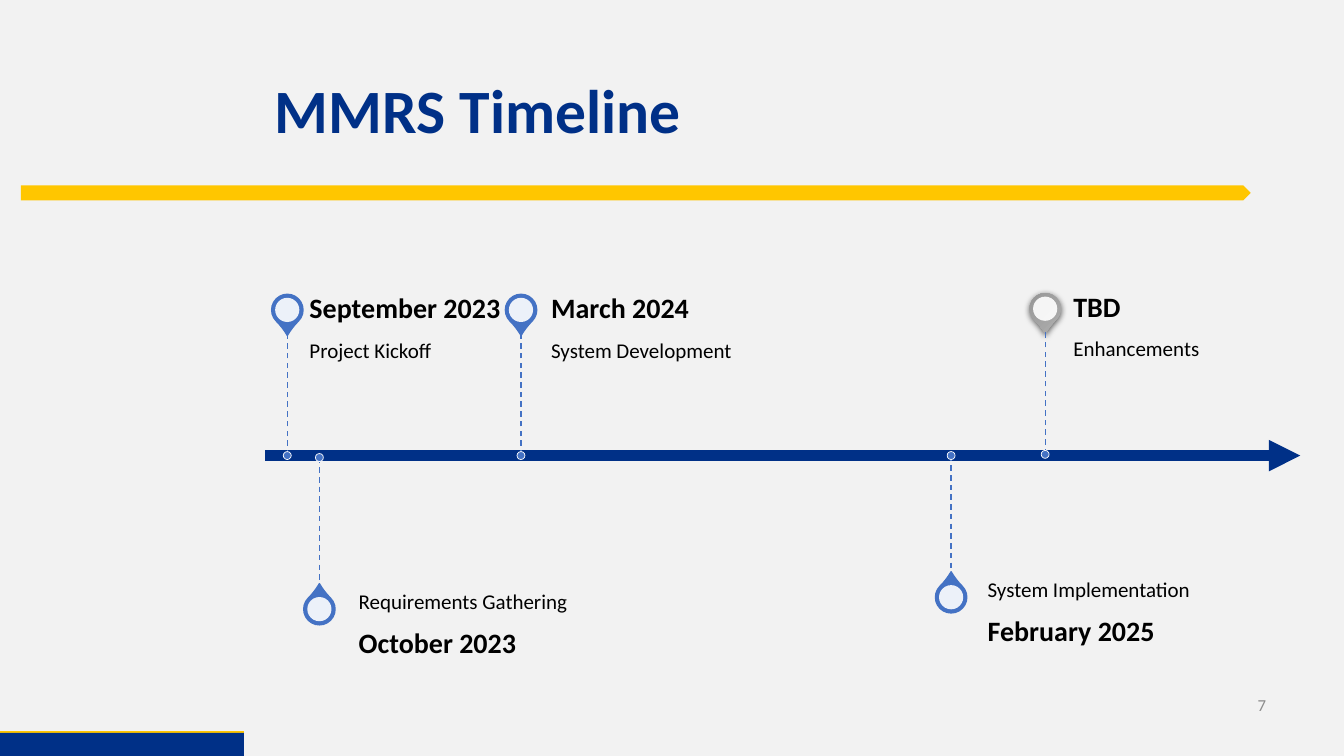
from dataclasses import dataclass

from lxml.etree import SubElement
from pptx import Presentation
from pptx.dml.color import RGBColor
from pptx.enum.dml import MSO_LINE
from pptx.enum.shapes import MSO_CONNECTOR, MSO_SHAPE
from pptx.enum.text import MSO_ANCHOR, PP_ALIGN
from pptx.oxml.ns import qn
from pptx.util import Cm, Pt

NAVY = RGBColor(0x00, 0x30, 0x87)
GOLD = RGBColor(0xFF, 0xC6, 0x00)
BLUE = RGBColor(0x44, 0x72, 0xC4)
WHITE = RGBColor(0xFF, 0xFF, 0xFF)
BLACK = RGBColor(0x00, 0x00, 0x00)
PALE_GRAY = RGBColor(0xF2, 0xF2, 0xF2)
NUMBER_GRAY = RGBColor(0x8C, 0x8C, 0x8C)
PIN_GRAYS = (RGBColor(0xAF, 0xAF, 0xAF), RGBColor(0x93, 0x93, 0x93))

STEM_LENGTH = 3.12
DATE_HEIGHT = 1.1
PIN_SIZE = 0.79
HOLE_SIZE = 0.61
DOT_SIZE = 0.2


@dataclass
class Milestone:
    date: str
    label: str
    x: float
    text_left: float
    drop: float
    axis_shift: float = 0
    text_width: float = 7.21
    planned: bool = True


MILESTONES = (
    Milestone("September 2023", "Project Kickoff", 7.24, 7.8, -3.67),
    Milestone("October 2023", "Requirements Gathering", 8.05, 9.04, 3.82, axis_shift=0.05),
    Milestone("March 2024", "System Development", 13.13, 13.89, -3.67),
    Milestone("February 2025", "System Implementation", 23.97, 24.89, 3.57),
    Milestone("TBD", "Enhancements", 26.34, 27.05, -3.67, axis_shift=-0.03,
              text_width=5.56, planned=False),
)


def add_shape(slide, kind, box, color, outline=None, outline_width=1):
    shape = slide.shapes.add_shape(kind, *map(Cm, box))
    shape.shadow.inherit = False
    shape.fill.solid()
    shape.fill.fore_color.rgb = color
    if outline is None:
        shape.line.fill.background()
    else:
        shape.line.color.rgb = outline
        shape.line.width = Pt(outline_width)
    return shape


def add_circle(slide, x, y, size, color, **outline):
    box = (x - size / 2, y - size / 2, size, size)
    return add_shape(slide, MSO_SHAPE.OVAL, box, color, **outline)


def add_line(slide, start, end, color, width):
    line = slide.shapes.add_connector(MSO_CONNECTOR.STRAIGHT, *map(Cm, start + end))
    line.line.color.rgb = color
    line.line.width = Pt(width)
    SubElement(line._element.spPr, qn("a:effectLst"))
    return line


def add_text(slide, box, text, size, color=BLACK, bold=False, anchor=MSO_ANCHOR.MIDDLE,
             align=PP_ALIGN.LEFT, insets=(0.25, 0.13, 0.25, 0.13)):
    frame = slide.shapes.add_textbox(*map(Cm, box)).text_frame
    left, top, right, bottom = map(Cm, insets)
    frame_format = {"word_wrap": True, "vertical_anchor": anchor, "margin_left": left,
                    "margin_top": top, "margin_right": right, "margin_bottom": bottom}
    for name, value in frame_format.items():
        setattr(frame, name, value)
    paragraph = frame.paragraphs[0]
    paragraph.text = text
    paragraph.alignment = align
    paragraph.line_spacing = 0.9
    for name, value in {"name": "Calibri", "size": Pt(size), "bold": bold}.items():
        setattr(paragraph.font, name, value)
    paragraph.font.color.rgb = color


def add_header(slide, left, top, width, height):
    add_text(slide, (left, top, width, height), "MMRS Timeline", 44, NAVY, True)
    add_shape(slide, MSO_SHAPE.PENTAGON, (0.53, top + height - 0.03, 30.99, 0.38), GOLD)


def add_footer(slide, left, top, width, height):
    add_line(slide, (left, top), (left + width, top), GOLD, 3)
    add_shape(slide, MSO_SHAPE.RECTANGLE, (left, top, width, height), NAVY)
    add_text(slide, (30.94, top - 1.19, 1.22, 1.02), "7", 12, NUMBER_GRAY,
             align=PP_ALIGN.RIGHT)


def add_pin(slide, x, y, rotation, planned):
    box = (x - PIN_SIZE / 2, y - PIN_SIZE / 2, PIN_SIZE, PIN_SIZE)
    pin = add_shape(slide, MSO_SHAPE.TEAR, box, BLUE, BLUE if planned else None)
    pin.adjustments[0] = 1.15
    pin.rotation = rotation
    if not planned:
        pin.fill.gradient()
        pin.fill.gradient_angle = 270
        for stop, color in zip(pin.fill.gradient_stops, PIN_GRAYS):
            stop.color.rgb = color
        effects = pin._element.spPr.find(qn("a:effectLst"))
        shadow = SubElement(effects, qn("a:outerShdw"), blurRad="57150", dist="19050",
                            dir="5400000", algn="ctr", rotWithShape="0")
        shadow_color = SubElement(shadow, qn("a:srgbClr"), val="000000")
        SubElement(shadow_color, qn("a:alpha"), val="63000")
    hole = add_circle(slide, x, y, HOLE_SIZE, WHITE)
    hole_color = hole._element.spPr.find(qn("a:solidFill")).find(qn("a:srgbClr"))
    SubElement(hole_color, qn("a:alpha"), val="90000")


def add_milestone(slide, milestone, axis_y):
    x, y = milestone.x, axis_y + milestone.axis_shift
    if milestone.drop < 0:
        label_top = y - STEM_LENGTH
        date_top = label_top - DATE_HEIGHT
        stem_end = y - STEM_LENGTH
        rotation, anchor, insets = 135, MSO_ANCHOR.TOP, (0, 0.25, 0.25, 0.41)
    else:
        label_top = y + milestone.drop - 2.78
        date_top = label_top + STEM_LENGTH
        stem_end = y + STEM_LENGTH
        rotation, anchor, insets = 315, MSO_ANCHOR.BOTTOM, (0, 0.41, 0, 0.25)
    left, width = milestone.text_left, milestone.text_width
    add_pin(slide, x, y + milestone.drop, rotation, milestone.planned)
    add_text(slide, (left, label_top, width, STEM_LENGTH), milestone.label, 15,
             anchor=anchor, insets=insets)
    add_text(slide, (left, date_top, width, DATE_HEIGHT), milestone.date, 20, bold=True,
             insets=(0, 0, 0.36, 0))
    stem = add_line(slide, (x, y), (x, stem_end), BLUE, 1)
    stem.line.dash_style = MSO_LINE.DASH
    add_circle(slide, x, y, DOT_SIZE, BLUE, outline=WHITE, outline_width=0.5)


def add_timeline(slide, left, axis_y, width):
    axis = add_line(slide, (left, axis_y), (left + width, axis_y), NAVY, 7.5)
    SubElement(axis.line._get_or_add_ln(), qn("a:tailEnd"), type="triangle")
    for milestone in MILESTONES:
        add_milestone(slide, milestone, axis_y)


def main():
    presentation = Presentation()
    presentation.slide_width = Cm(33.87)
    presentation.slide_height = Cm(19.05)
    slide = presentation.slides.add_slide(presentation.slide_layouts[6])
    slide.background.fill.solid()
    slide.background.fill.fore_color.rgb = PALE_GRAY
    add_header(slide, 6.68, 1.02, 24.87, 3.68)
    add_footer(slide, 0, 18.47, 6.15, 0.58)
    add_timeline(slide, 6.68, 11.48, 26.09)
    presentation.save("out.pptx")


if __name__ == "__main__":
    main()
